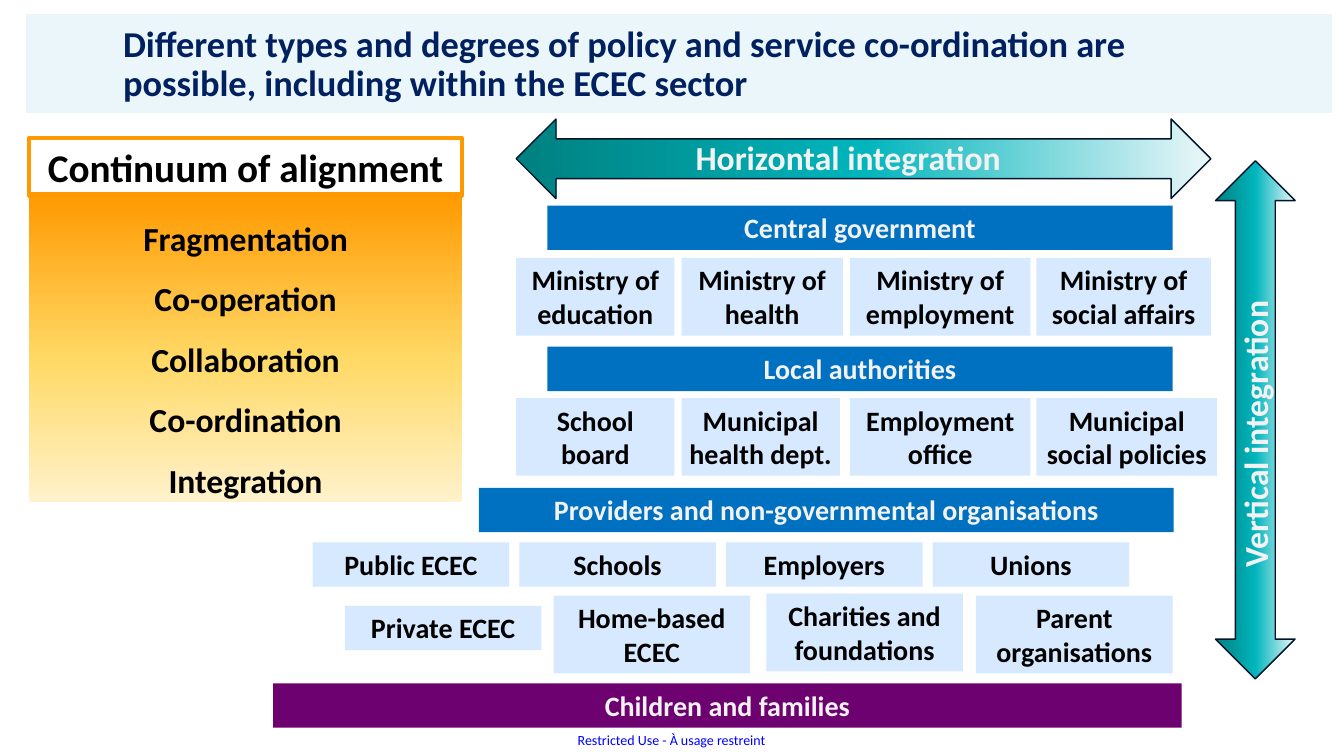
from lxml import etree
from pptx import Presentation
from pptx.dml.color import RGBColor
from pptx.enum.shapes import MSO_SHAPE as SHAPE
from pptx.enum.text import MSO_ANCHOR as ANCHOR, MSO_AUTO_SIZE as AUTO, PP_ALIGN as ALIGN
from pptx.oxml.ns import qn
from pptx.util import Pt

PX = 9144  # 100 px to the inch
FONT = "Calibri"
COLORS = {
    "band": "6FC5D5", "title": "002060", "notice": "0000FF",
    "level": "0070C0", "families": "6C016F", "actor": "D7E9FE",
    "light": "F2F2F2", "dark": "000000", "orange": "FF9900", "outline": "01142B",
}
CONTINUUM_STOPS = [(0, "FFF2CC"), (46, "FFD966"), (100, "FF9900")]
ARROW_STOPS = [(0, "008080"), (50, "00B5BC"), (100, "EBF7F9")]
STAGES = ["Fragmentation", "Co-operation", "Collaboration", "Co-ordination", "Integration"]
LEVELS = [
    (543, 204, 620, "Central government", "level"),
    (543, 344, 620, "Local authorities", "level"),
    (475, 484, 689, "Providers and non-governmental organisations", "level"),
    (271, 678, 901, "Children and families", "families"),
]
DEPARTMENT_LEFTS = [512, 676, 843, 1028]
DEPARTMENT_ROWS = [
    (256, [("Ministry of education", 157), ("Ministry of health", 160),
           ("Ministry of employment", 179), ("Ministry of social affairs", 173)]),
    (395, [("School board", 157), ("Municipal health dept.", 157),
           ("Employment office", 179), ("Municipal social policies", 179)]),
]
PROVIDERS = ["Public ECEC", "Schools", "Employers", "Unions"]
OTHER_PROVIDERS = [
    (342, 601, 44, "Private ECEC"), (549, 591, 77, "Home-based ECEC"),
    (760, 589, 77, "Charities and foundations"), (968, 591, 77, "Parent organisations"),
]


def rgb(name):
    return RGBColor.from_string(COLORS[name])


def emu(*lengths):
    return [length * PX for length in lengths]


def write(frame, lines, size, color, bold=True, align=ALIGN.CENTER, spacing=None):
    frame.word_wrap = True
    for index, line in enumerate(lines):
        paragraph = frame.paragraphs[0] if index == 0 else frame.add_paragraph()
        paragraph.alignment = align
        if spacing:
            paragraph.line_spacing = spacing
        run = paragraph.add_run()
        run.text = line
        run.font.name, run.font.size, run.font.bold = FONT, Pt(size), bold
        run.font.color.rgb = rgb(color)


def add_block(slide, box, fill=None, kind=SHAPE.RECTANGLE):
    block = slide.shapes.add_shape(kind, *emu(*box))
    block.shadow.inherit = False
    block.line.fill.background()
    if fill:
        block.fill.solid()
        block.fill.fore_color.rgb = rgb(fill)
    else:
        block.fill.background()
    return block


def add_label(slide, box, text, fill, color, inset=10):
    label = add_block(slide, box, fill)
    frame = label.text_frame
    frame.margin_left = frame.margin_right = inset * PX
    frame.vertical_anchor = ANCHOR.TOP
    frame.auto_size = AUTO.SHAPE_TO_FIT_TEXT
    write(frame, [text], 20, color)


def add_text(slide, box, text, size, color, bold=True, rotation=0):
    textbox = slide.shapes.add_textbox(*emu(*box))
    textbox.rotation = rotation
    write(textbox.text_frame, [text], size, color, bold, ALIGN.LEFT)
    return textbox


def set_gradient(block, stops, angle):
    """Fill with stops of (percent, hex); the angle is clockwise and fixed to the slide."""
    block.fill.gradient()
    block.fill.gradient_angle = (360 - angle) % 360
    gradient = block._element.spPr.find(qn("a:gradFill"))
    gradient.set("rotWithShape", "0")
    stop_list = gradient.find(qn("a:gsLst"))
    for old_stop in list(stop_list):
        stop_list.remove(old_stop)
    for percent, color in stops:
        stop = etree.SubElement(stop_list, qn("a:gs"), pos=str(percent * 1000))
        etree.SubElement(stop, qn("a:srgbClr"), val=color)


def add_arrow(slide, box, rotation=0):
    arrow = add_block(slide, box, kind=SHAPE.LEFT_RIGHT_ARROW)
    arrow.rotation = rotation
    set_gradient(arrow, ARROW_STOPS, 0)
    arrow.line.color.rgb = rgb("outline")
    arrow.line.width = Pt(1)


def add_heading(slide):
    band = add_block(slide, (26, 14, 1295, 98), "band")
    tint = band._element.spPr.find(qn("a:solidFill"))[0]
    etree.SubElement(tint, qn("a:alpha"), val="14000")
    title = slide.shapes.title
    title.left, title.top, title.width, title.height = emu(112, 18, 1145, 94)
    title.text_frame.vertical_anchor = ANCHOR.MIDDLE
    write(title.text_frame, ["Different types and degrees of policy and service co-ordination "
                             "are possible, including within the ECEC sector"],
          26, "title", align=ALIGN.LEFT, spacing=0.9)
    band._element.addnext(title._element)


def add_continuum(slide):
    stages = add_block(slide, (29, 191, 429, 307))
    set_gradient(stages, CONTINUUM_STOPS, 270)
    stages.text_frame.vertical_anchor = ANCHOR.TOP
    write(stages.text_frame, STAGES, 24, "dark", spacing=1.5)
    header = add_block(slide, (29, 137, 429, 57))
    header.line.color.rgb = rgb("orange")
    header.line.width = Pt(3)
    header.text_frame.vertical_anchor = ANCHOR.TOP
    write(header.text_frame, ["Continuum of alignment"], 28, "dark")


def add_integration(slide):
    for left, top, width, text, fill in LEVELS:
        add_label(slide, (left, top, width, 44), text, fill, "light")
    for top, departments in DEPARTMENT_ROWS:
        for left, (text, width) in zip(DEPARTMENT_LEFTS, departments):
            add_label(slide, (left, top, width, 77), text, "actor", "dark", inset=5)
    for index, text in enumerate(PROVIDERS):
        add_label(slide, (310 + 205 * index, 538, 195, 44), text, "actor", "dark")
    for left, top, height, text in OTHER_PROVIDERS:
        add_label(slide, (left, top, 195, height), text, "actor", "dark")
    add_arrow(slide, (512, 118, 689, 79))
    add_text(slide, (680, 131, 348, 50), "Horizontal integration", 24, "light")
    add_arrow(slide, (988, 377, 514, 79), rotation=270)
    add_text(slide, (1074, 377, 341, 50), "Vertical integration", 24, "light", rotation=270)


def add_notice(slide):
    notice = add_text(slide, (573, 726, 191, 17), "Restricted Use - À usage restreint",
                      10, "notice", bold=False)
    frame = notice.text_frame
    frame.margin_left = frame.margin_right = frame.margin_top = frame.margin_bottom = 0


def main():
    deck = Presentation()
    deck.slide_width, deck.slide_height = emu(1333, 750)
    slide = deck.slides.add_slide(deck.slide_layouts[5])
    add_heading(slide)
    add_notice(slide)
    add_continuum(slide)
    add_integration(slide)
    deck.save("out.pptx")


if __name__ == "__main__":
    main()
